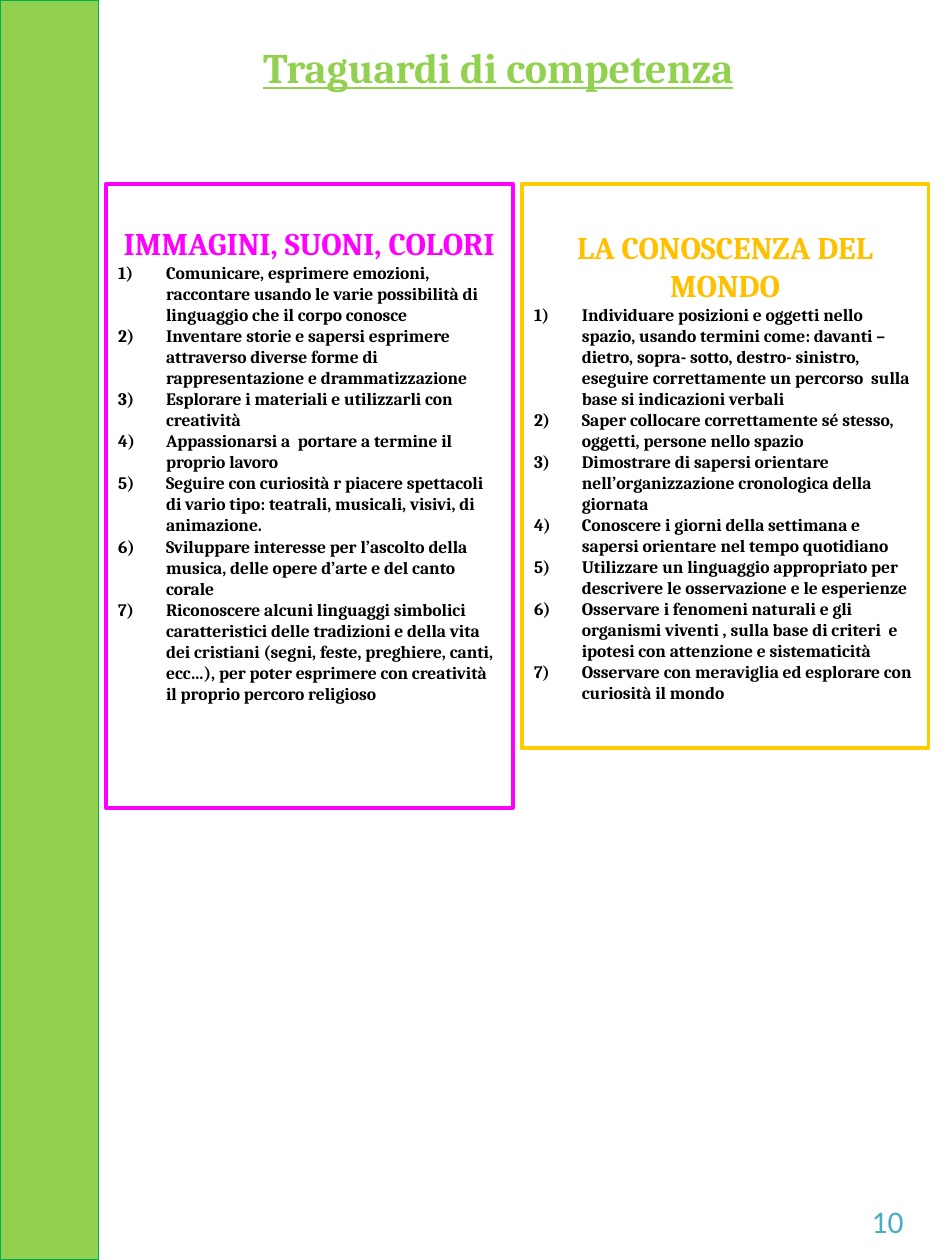
from dataclasses import dataclass

from lxml import etree
from pptx import Presentation
from pptx import util as u
from pptx.dml.color import RGBColor
from pptx.enum import shapes, text
from pptx.oxml import ns


@dataclass(frozen=True)
class Theme:
    serif: str = "Cambria"
    sans: str = "Calibri"
    green: str = "92D050"
    dark_green: str = "00B050"
    magenta: str = "FF00FF"
    yellow: str = "FFCC00"
    amber: str = "FFC000"
    teal: str = "4BACC6"
    black: str = "000000"
    title: int = 24
    heading: int = 18
    body: int = 10


THEME = Theme()

IMAGES_GOALS = [
    "Comunicare, esprimere emozioni, raccontare usando le varie possibilità di linguaggio che il corpo conosce",
    "Inventare storie e sapersi esprimere attraverso diverse forme di rappresentazione e drammatizzazione",
    "Esplorare i materiali e utilizzarli con creatività",
    "Appassionarsi a  portare a termine il proprio lavoro",
    "Seguire con curiosità r piacere spettacoli di vario tipo: teatrali, musicali, visivi, di animazione.",
    "Sviluppare interesse per l’ascolto della musica, delle opere d’arte e del canto corale",
    "Riconoscere alcuni linguaggi simbolici  caratteristici delle tradizioni e della vita dei cristiani "
    "(segni, feste, preghiere, canti, ecc…), per poter esprimere con creatività il proprio percoro religioso",
]

WORLD_GOALS = [
    "Individuare posizioni e oggetti nello spazio, usando termini come: davanti – dietro, sopra- sotto, "
    "destro- sinistro,  eseguire correttamente un percorso  sulla base si indicazioni verbali",
    "Saper collocare correttamente sé stesso, oggetti, persone nello spazio",
    "Dimostrare di sapersi orientare nell’organizzazione cronologica della giornata",
    "Conoscere i giorni della settimana e sapersi orientare nel tempo quotidiano",
    "Utilizzare un linguaggio appropriato per descrivere le osservazione e le esperienze",
    "Osservare i fenomeni naturali e gli organismi viventi , sulla base di criteri  e ipotesi "
    "con attenzione e sistematicità",
    "Osservare con meraviglia ed esplorare con curiosità il mondo",
]


def style(p, size, color, name=THEME.serif, bold=True, align=text.PP_ALIGN.LEFT):
    p.alignment = align
    p.font.size = u.Pt(size)
    p.font.name = name
    p.font.bold = bold
    p.font.color.rgb = RGBColor.from_string(color)


def number(p):
    pPr = p._p.get_or_add_pPr()
    pPr.set("marL", str(u.Inches(0.38)))
    pPr.set("indent", str(-u.Inches(0.38)))
    font = etree.Element(ns.qn("a:buFont"), typeface="+mj-lt")
    auto = etree.Element(ns.qn("a:buAutoNum"), type="arabicParenR")
    pPr.insert(0, font)
    pPr.insert(1, auto)


def add_box(s, left, top, width, height, line, weight, fill=None):
    sp = s.shapes.add_shape(shapes.MSO_SHAPE.RECTANGLE, u.Inches(left), u.Inches(top),
                            u.Inches(width), u.Inches(height))
    sp.shadow.inherit = False
    sp.line.color.rgb = RGBColor.from_string(line)
    sp.line.width = u.Pt(weight)
    if fill:
        sp.fill.solid()
        sp.fill.fore_color.rgb = RGBColor.from_string(fill)
    else:
        sp.fill.background()
    return sp


def add_label(s, left, top, width, height, words, wrap=True):
    sp = s.shapes.add_textbox(u.Inches(left), u.Inches(top), u.Inches(width), u.Inches(height))
    tf = sp.text_frame
    tf.word_wrap = wrap
    tf.text = words
    return tf.paragraphs[0]


def add_panel(s, left, height, inset, line, color, heading, goals):
    tf = add_box(s, left, 1.46, 3.23, height, line, 2.25).text_frame
    tf.word_wrap = True
    tf.vertical_anchor = text.MSO_ANCHOR.TOP
    tf.margin_top = u.Inches(inset)
    tf.text = heading
    style(tf.paragraphs[0], THEME.heading, color, align=text.PP_ALIGN.CENTER)
    for goal in goals:
        p = tf.add_paragraph()
        p.text = goal
        style(p, THEME.body, THEME.black)
        number(p)


def main():
    prs = Presentation()
    prs.slide_width, prs.slide_height = u.Inches(7.5), u.Inches(10)
    s = prs.slides.add_slide(prs.slide_layouts[6])

    add_panel(s, 4.14, 4.48, 0.35, THEME.yellow, THEME.amber, "LA CONOSCENZA DEL MONDO", WORLD_GOALS)
    page = add_label(s, 6.82, 9.49, 0.55, 0.4, "10")
    style(page, THEME.heading, THEME.teal, THEME.sans, bold=False)
    title = add_label(s, 1.93, 0.28, 4.05, 0.84, "Traguardi di competenza", wrap=False)
    style(title, THEME.title, THEME.green, align=text.PP_ALIGN.CENTER)
    title.font.underline = True
    add_panel(s, 0.84, 4.95, 0.32, THEME.magenta, THEME.magenta, "IMMAGINI, SUONI, COLORI", IMAGES_GOALS)
    add_box(s, 0, 0, 0.78, 10, THEME.dark_green, 0.75, THEME.green)

    prs.save("out.pptx")


if __name__ == "__main__":
    main()
